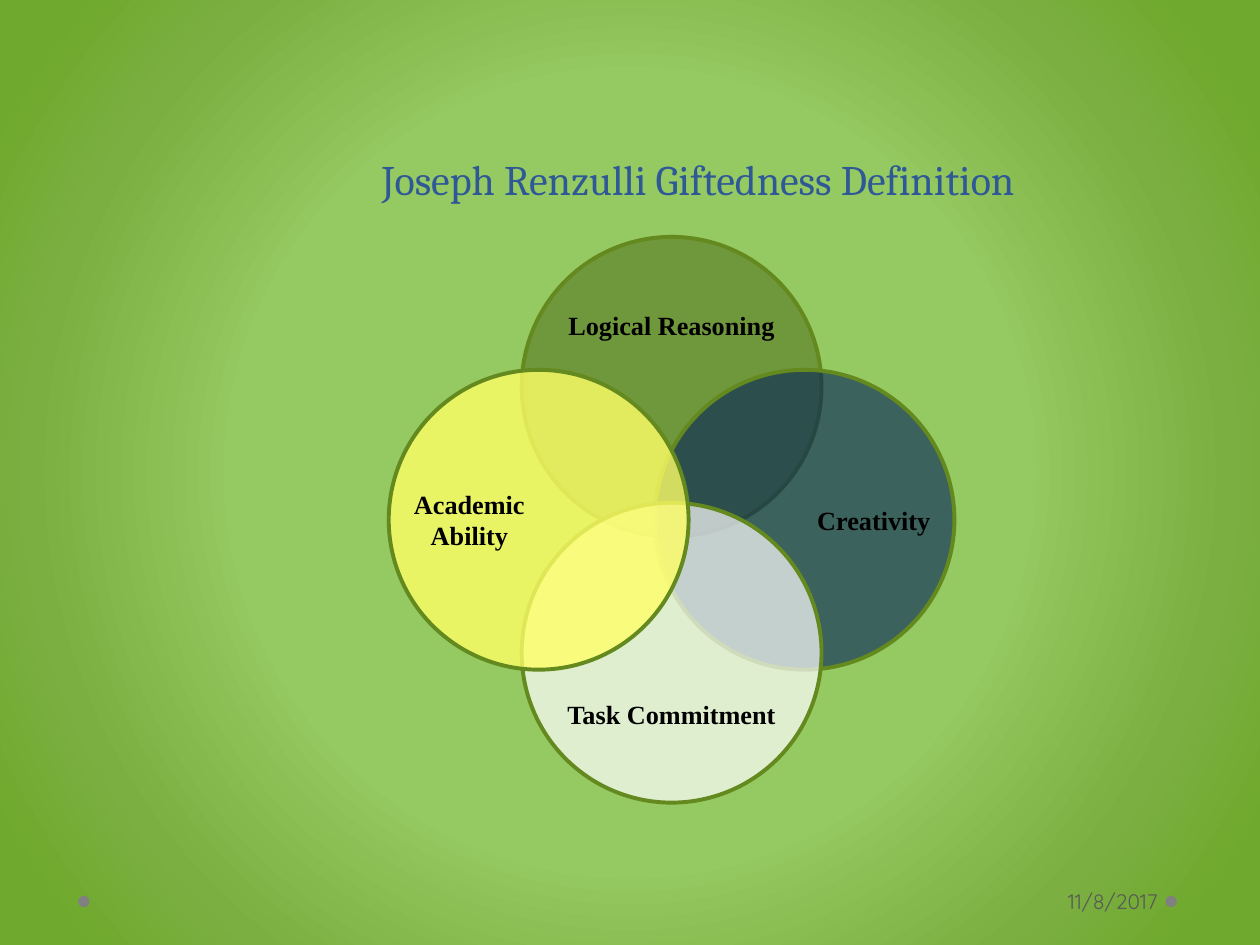
from pptx import Presentation
from pptx.dml.color import RGBColor
from pptx.enum.shapes import MSO_SHAPE
from pptx.enum.text import MSO_ANCHOR, PP_ALIGN
from pptx.oxml import parse_xml
from pptx.oxml.ns import nsdecls, qn
from pptx.util import Inches, Pt

OVAL = MSO_SHAPE.OVAL
MIDDLE, BOTTOM = MSO_ANCHOR.MIDDLE, MSO_ANCHOR.BOTTOM
CENTER, RIGHT = PP_ALIGN.CENTER, PP_ALIGN.RIGHT

TITLE = "Joseph Renzulli Giftedness Definition"
DATE = "11/8/2017"
# label, direction from the middle, fill, opacity in percent; back to front
CIRCLES = [
    ("Logical Reasoning", (0, -1), "4A6717", 50),
    ("Creativity", (1, 0), "001E5A", 60),
    ("Task Commitment", (0, 1), "FFFFFF", 70),
    ("Academic Ability", (-1, 0), "FFFF66", 80),
]

# font, size, colour, bold
THEME = {
    "title": ("Cambria", 24, "2F5897", False),
    "label": ("Times New Roman", 15, "000000", True),
    "date": ("Quicksand", 12, "595959", False),
    "ring": "63891F",
    "dot": "808080",
    "glow": [(0, "95C961"), (50, "95C961"), (76, "7BAF41"), (92, "6FA92D"), (100, "6FA92D")],
}

# All lengths are percent of the slide's width.
WIDTH, HEIGHT = Inches(10), Inches(7.5)
MID = (53.3, 41.25)
SIZE, SHIFT = 23.8, 10.55
LONG, SHORT = 18.3, 7.6
SIDE, REACH_X, REACH_Y = 9.2, 16.05, 15.45
DOTS, DOT_Y, DOT = (6.65, 92.95), 71.55, 0.9

prs = Presentation()
prs.slide_width, prs.slide_height = WIDTH, HEIGHT
slide = prs.slides.add_slide(prs.slide_layouts[6])


def frame(x, y, w, h):
    """Turn a centre and size in percent into left, top, width, height."""
    return [round(v * WIDTH / 100) for v in (x - w / 2, y - h / 2, w, h)]


def disc(x, y, size, color, alpha=100, ring=None):
    shape = slide.shapes.add_shape(OVAL, *frame(x, y, size, size))
    shape.shadow.inherit = False
    shape.fill.solid()
    shape.fill.fore_color.rgb = RGBColor.from_string(color)
    if alpha < 100:
        tint = shape.element.spPr.find(qn("a:solidFill"))[0]
        tint.append(parse_xml(f'<a:alpha {nsdecls("a")} val="{alpha * 1000}"/>'))
    if ring:
        shape.line.color.rgb = RGBColor.from_string(ring)
        shape.line.width = Pt(2.25)
    else:
        shape.line.fill.background()


def write(text, box, style, anchor=MIDDLE, align=CENTER, pad=(0, 0, 0, 0)):
    body = slide.shapes.add_textbox(*frame(*box)).text_frame
    body.word_wrap = True
    body.vertical_anchor = anchor
    body.margin_left, body.margin_top, body.margin_right, body.margin_bottom = map(Inches, pad)
    par = body.paragraphs[0]
    par.text, par.alignment = text, align
    name, size, color, bold = THEME[style]
    par.font.name, par.font.size, par.font.bold = name, Pt(size), bold
    par.font.color.rgb = RGBColor.from_string(color)
    return par


def glow(stops):
    """Fill the background with a round gradient."""
    slide.background.fill.solid()
    back = slide.element.find(".//" + qn("p:bgPr"))
    marks = "".join(
        f'<a:gs pos="{pos * 1000}"><a:srgbClr val="{color}"/></a:gs>' for pos, color in stops
    )
    fill = parse_xml(
        f'<a:gradFill {nsdecls("a")} rotWithShape="1"><a:gsLst>{marks}</a:gsLst>'
        '<a:path path="circle"><a:fillToRect l="50000" t="50000" r="50000" b="50000"/>'
        "</a:path></a:gradFill>"
    )
    back.replace(back[0], fill)


glow(THEME["glow"])
for x in DOTS:
    disc(x, DOT_Y, DOT, THEME["dot"])

head = write(TITLE, (55.4, 12.95, 69.2, 7.5), "title", BOTTOM, pad=(0.1, 0.05, 0.1, 0.05))
head.line_spacing = Pt(58)

for text, (dx, dy), color, alpha in CIRCLES:
    disc(MID[0] + dx * SHIFT, MID[1] + dy * SHIFT, SIZE, color, alpha, THEME["ring"])
    area = (SIDE, LONG) if dx else (LONG, SHORT)
    write(text, (MID[0] + dx * REACH_X, MID[1] + dy * REACH_Y, *area), "label")

write(DATE, (81, 71.5, 22.8, 4), "date", align=RIGHT, pad=(0.1, 0.05, 0.05, 0.05))

prs.save("out.pptx")
